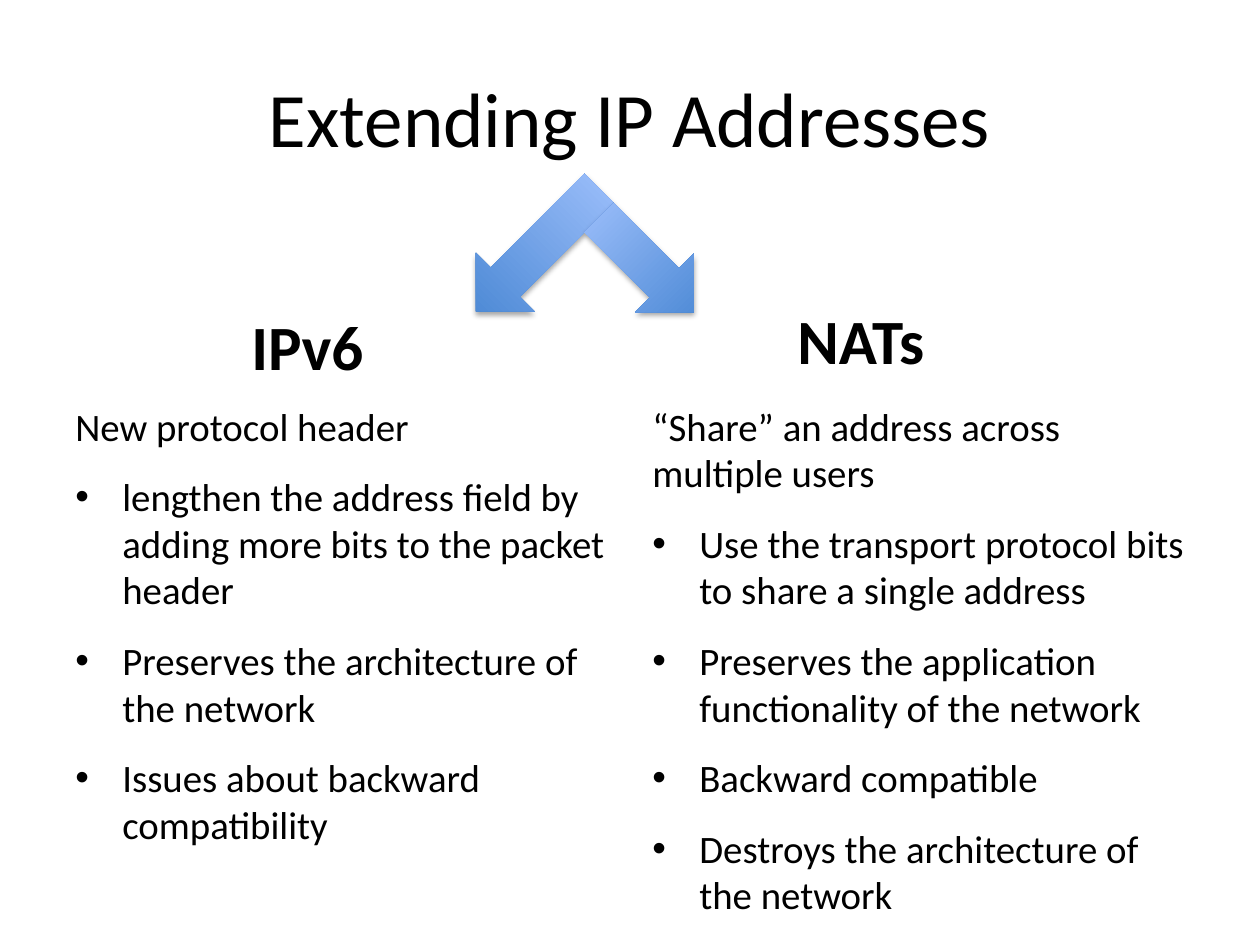
from lxml import etree
from pptx import Presentation
from pptx.dml.color import RGBColor
from pptx.enum.shapes import MSO_SHAPE
from pptx.enum.text import MSO_ANCHOR, MSO_AUTO_SIZE, PP_ALIGN
from pptx.oxml.ns import qn
from pptx.util import Emu, Pt

DOWN_ARROW = MSO_SHAPE.DOWN_ARROW
MIDDLE = MSO_ANCHOR.MIDDLE
FIT_SHAPE = MSO_AUTO_SIZE.SHAPE_TO_FIT_TEXT
CENTER = PP_ALIGN.CENTER

BLACK = RGBColor(0x00, 0x00, 0x00)
ARROW_DARK = RGBColor(0x3F, 0x80, 0xCE)
ARROW_LIGHT = RGBColor(0xA4, 0xC4, 0xFF)
FONT = "Calibri"

PX_PER_INCH = 126
BULLET_INDENT = 47
COLUMN_TOP, COLUMN_WIDTH, COLUMN_HEIGHT = 396, 557, 449

# left edge of the column, lead line, bullets
COLUMNS = [
    (63, "New protocol header", [
        "lengthen the address field by adding more bits to the packet header",
        "Preserves the architecture of the network",
        "Issues about backward compatibility",
    ]),
    (640, "“Share” an address across multiple users", [
        "Use the transport protocol bits to share a single address",
        "Preserves the application functionality of the network",
        "Backward compatible",
        "Destroys the architecture of the network",
    ]),
]
HEADINGS = [("IPv6", (239, 301, 139, 89)), ("NATs", (785, 295, 163, 89))]
ARROWS = [((496, 163, 83, 174), 45), ((605, 198, 83, 134), 315)]


def px(length):
    return Emu(round(length * 914400 / PX_PER_INCH))


def set_font(para, size, bold=False):
    para.font.name = FONT
    para.font.size = Pt(size)
    para.font.bold = bold
    para.font.color.rgb = BLACK


def add_title(page, text):
    title = page.shapes.title
    title.left, title.top, title.width, title.height = map(px, (63, 38, 1134, 158))
    frame = title.text_frame
    frame.text = text
    frame.vertical_anchor = MIDDLE
    frame.paragraphs[0].alignment = CENTER
    set_font(frame.paragraphs[0], 44)


def add_bullet(para):
    properties = para._p.get_or_add_pPr()
    properties.set("marL", str(px(BULLET_INDENT)))
    properties.set("indent", str(-px(BULLET_INDENT)))
    etree.SubElement(properties, qn("a:buFont"), typeface="Arial")
    etree.SubElement(properties, qn("a:buChar"), char="•")


def add_column(page, left, lead, bullets):
    box = page.shapes.add_textbox(
        *map(px, (left, COLUMN_TOP, COLUMN_WIDTH, COLUMN_HEIGHT)))
    frame = box.text_frame
    frame.word_wrap = True
    frame.text = "\n".join([lead, *bullets])
    for index, para in enumerate(frame.paragraphs):
        para.space_before = Pt(13.7)
        if index:
            add_bullet(para)
        set_font(para, 22.2)


def add_heading(page, text, place):
    frame = page.shapes.add_textbox(*map(px, place)).text_frame
    frame.word_wrap = False
    frame.auto_size = FIT_SHAPE
    frame.text = text
    set_font(frame.paragraphs[0], 36, bold=True)


def add_soft_shadow(shape):
    effects = etree.SubElement(shape._element.spPr, qn("a:effectLst"))
    shadow = etree.SubElement(
        effects, qn("a:outerShdw"), blurRad=str(Pt(3.1)), dist=str(Pt(1.8)),
        dir="5400000", rotWithShape="0")
    color = etree.SubElement(shadow, qn("a:srgbClr"), val=str(BLACK))
    etree.SubElement(color, qn("a:alpha"), val="35000")


def add_arrow(page, place, rotation):
    arrow = page.shapes.add_shape(DOWN_ARROW, *map(px, place))
    arrow.rotation = rotation
    arrow.fill.gradient()
    arrow.fill.gradient_angle = 90
    for stop, color in zip(arrow.fill.gradient_stops, (ARROW_DARK, ARROW_LIGHT)):
        stop.color.rgb = color
    arrow.line.fill.background()
    add_soft_shadow(arrow)


def main():
    deck = Presentation()
    deck.slide_width, deck.slide_height = px(1260), px(945)
    page = deck.slides.add_slide(deck.slide_layouts[5])
    add_title(page, "Extending IP Addresses")
    for left, lead, bullets in COLUMNS:
        add_column(page, left, lead, bullets)
    for place, rotation in ARROWS:
        add_arrow(page, place, rotation)
    for text, place in HEADINGS:
        add_heading(page, text, place)
    deck.save("out.pptx")


if __name__ == "__main__":
    main()
